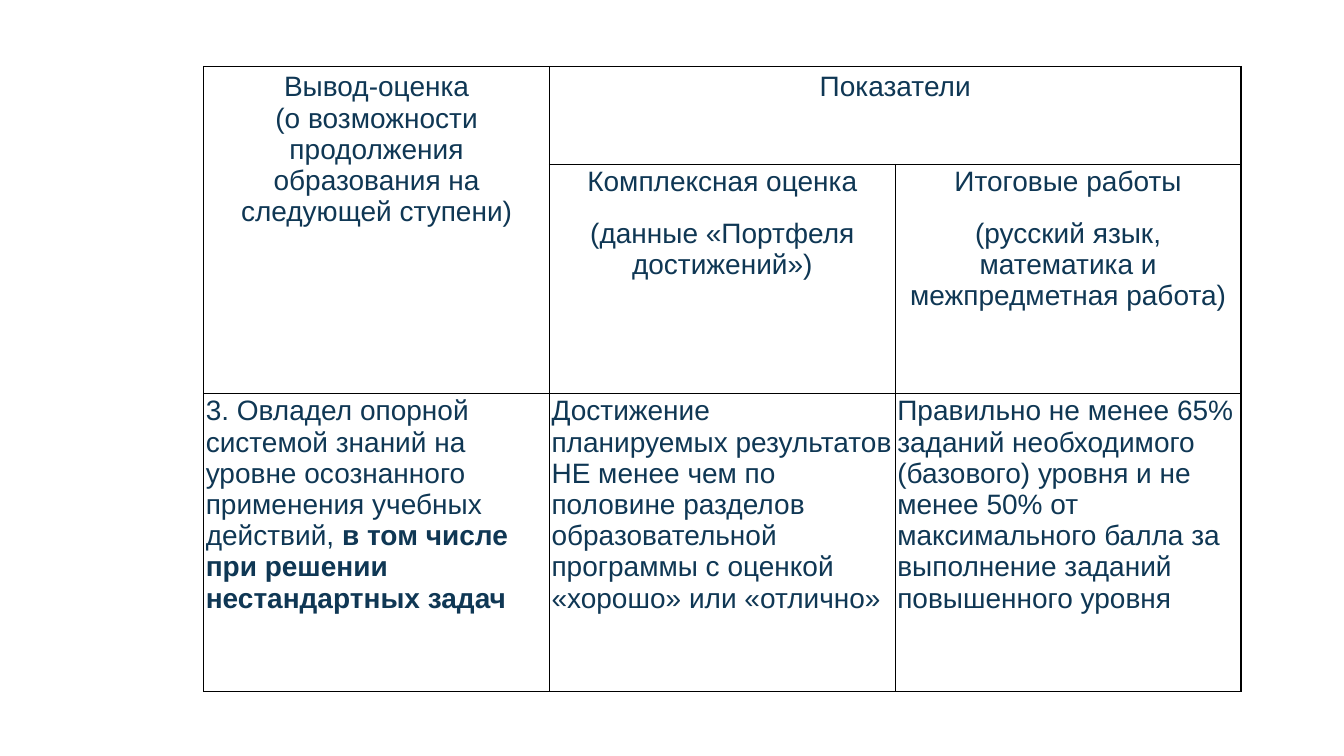
from dataclasses import dataclass

from lxml import etree
from pptx import Presentation
from pptx.dml.color import RGBColor
from pptx.enum.text import PP_ALIGN
from pptx.oxml.ns import qn
from pptx.slide import Slide
from pptx.table import Table, _Cell
from pptx.util import Pt

CENTER = PP_ALIGN.CENTER
LEFT = PP_ALIGN.LEFT


@dataclass(frozen=True)
class Theme:
    font: str = "Arial"
    text_size: float = 20
    text_color: str = "0F3754"
    border_color: str = "000000"
    border_width: float = 1


@dataclass(frozen=True)
class CellStyle:
    align: PP_ALIGN
    side_margin: float
    edge_margin: float
    space_after: float


@dataclass(frozen=True)
class CellContent:
    row: int
    column: int
    style: CellStyle
    lines: tuple[str, ...]
    bold_ending: str = ""
    row_span: int = 1
    column_span: int = 1


THEME = Theme()
SLIDE_WIDTH, SLIDE_HEIGHT = 960, 540
TABLE_LEFT, TABLE_TOP = 145.5, 47.5
COLUMN_WIDTHS = (247, 247, 247)
ROW_HEIGHTS = (70, 163.5, 213)

TITLE = CellStyle(CENTER, 7.2, 3.6, 0)
HEADING = CellStyle(CENTER, 1.5, 1.5, 14.2)
BODY = CellStyle(LEFT, 1.5, 1.5, 14.2)

CONTENTS = (
    CellContent(
        0, 0, TITLE,
        ("Вывод-оценка", "(о возможности продолжения образования на следующей ступени)"),
        row_span=2,
    ),
    CellContent(0, 1, TITLE, ("Показатели",), column_span=2),
    CellContent(1, 1, HEADING, ("Комплексная оценка", "(данные «Портфеля достижений»)")),
    CellContent(
        1, 2, HEADING,
        ("Итоговые работы", "(русский язык, математика и межпредметная работа)"),
    ),
    CellContent(
        2, 0, BODY,
        ("3. Овладел опорной системой знаний на уровне осознанного "
         "применения учебных действий, ",),
        bold_ending="в том числе при решении нестандартных задач",
    ),
    CellContent(
        2, 1, BODY,
        ("Достижение планируемых результатов НЕ менее чем по половине разделов "
         "образовательной программы с оценкой «хорошо» или «отлично»",),
    ),
    CellContent(
        2, 2, BODY,
        ("Правильно не менее 65% заданий необходимого (базового) уровня и не менее 50% "
         "от максимального балла за выполнение заданий повышенного уровня",),
    ),
)


def draw_borders(cell: _Cell) -> None:
    properties = cell._tc.get_or_add_tcPr()
    for position, side in enumerate(("a:lnL", "a:lnR", "a:lnT", "a:lnB")):
        line = etree.Element(qn(side), w=str(Pt(THEME.border_width)))
        fill = etree.SubElement(line, qn("a:solidFill"))
        etree.SubElement(fill, qn("a:srgbClr"), val=THEME.border_color)
        properties.insert(position, line)


def fill_cell(table: Table, content: CellContent) -> None:
    cell = table.cell(content.row, content.column)
    if content.row_span > 1 or content.column_span > 1:
        cell.merge(table.cell(
            content.row + content.row_span - 1,
            content.column + content.column_span - 1,
        ))
    style = content.style
    cell.margin_left = cell.margin_right = Pt(style.side_margin)
    cell.margin_top = cell.margin_bottom = Pt(style.edge_margin)
    frame = cell.text_frame
    frame.text = "\n".join(content.lines)
    if content.bold_ending:
        span = frame.paragraphs[-1].add_run()
        span.text = content.bold_ending
        span.font.bold = True
    for para in frame.paragraphs:
        para.alignment = style.align
        para.space_after = Pt(style.space_after)
        for span in para.runs:
            span.font.name = THEME.font
            span.font.size = Pt(THEME.text_size)
            span.font.color.rgb = RGBColor.from_string(THEME.text_color)


def add_criteria_table(page: Slide) -> None:
    table = page.shapes.add_table(
        len(ROW_HEIGHTS), len(COLUMN_WIDTHS), Pt(TABLE_LEFT), Pt(TABLE_TOP),
        Pt(sum(COLUMN_WIDTHS)), Pt(sum(ROW_HEIGHTS)),
    ).table
    table.first_row = False
    table.horz_banding = False
    for column, width in zip(table.columns, COLUMN_WIDTHS):
        column.width = Pt(width)
    for row, height in zip(table.rows, ROW_HEIGHTS):
        row.height = Pt(height)
    for cell in table.iter_cells():
        cell.fill.background()
        draw_borders(cell)
    for content in CONTENTS:
        fill_cell(table, content)


def main() -> None:
    deck = Presentation()
    deck.slide_width = Pt(SLIDE_WIDTH)
    deck.slide_height = Pt(SLIDE_HEIGHT)
    page = deck.slides.add_slide(deck.slide_layouts[6])
    add_criteria_table(page)
    deck.save("out.pptx")


if __name__ == "__main__":
    main()
